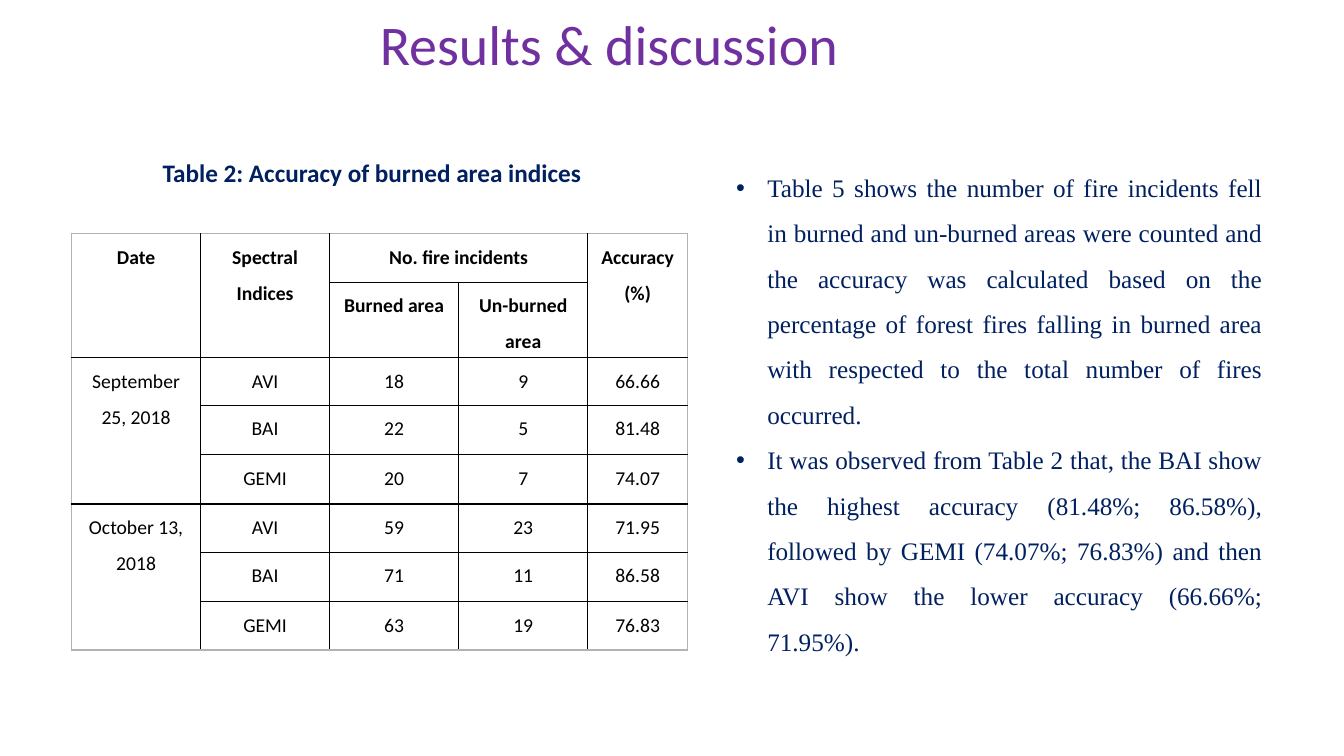
from lxml import etree
from pptx import Presentation, util as u
from pptx.dml.color import RGBColor
from pptx.enum import text as t
from pptx.oxml import ns

PX = 9144  # EMU per px, 100 px to the inch
NAVY, PURPLE, BLACK, GREY = "002060", "7030A0", "000000", "B2B2B2"

COLUMN_WIDTHS = [128, 128, 128, 128, 99]
ROW_HEIGHTS = [48, 75, 47, 49, 49, 48, 49, 48]
ROWS = [
    ["Date", "Spectral Indices", "No. fire incidents", "", "Accuracy\n(%)"],
    ["", "", "Burned area", "Un-burned area", ""],
    ["September 25, 2018", "AVI", "18", "9", "66.66"],
    ["", "BAI", "22", "5", "81.48"],
    ["", "GEMI", "20", "7", "74.07"],
    ["October 13, 2018", "AVI", "59", "23", "71.95"],
    ["", "BAI", "71", "11", "86.58"],
    ["", "GEMI", "63", "19", "76.83"],
]
HEADER_ROWS = 2
# First and last cell of each merged block, as (row, column)
MERGES = [((0, 0), (1, 0)), ((0, 1), (1, 1)), ((0, 2), (0, 3)),
          ((0, 4), (1, 4)), ((2, 0), (4, 0)), ((5, 0), (7, 0))]
FINDINGS = [
    "Table 5 shows the number of fire incidents fell in burned and un-burned areas "
    "were counted and the accuracy was calculated based on the percentage of forest "
    "fires falling in burned area with respected to the total number of fires occurred.",
    "It was observed from Table 2 that, the BAI show the highest accuracy "
    "(81.48%; 86.58%), followed by GEMI (74.07%; 76.83%) and then AVI show the "
    "lower accuracy (66.66%; 71.95%).",
]


def px(length):
    return u.Emu(length * PX)


def color(hex_string):
    return RGBColor.from_string(hex_string)


def write(frame, content, size=18, font="Calibri", fill=NAVY, bold=False,
          align=t.PP_ALIGN.CENTER, spacing=1.0):
    """Write each line of content as one paragraph and return the paragraphs."""
    frame.word_wrap = True
    for index, line in enumerate(content.split("\n")):
        paragraph = frame.add_paragraph() if index else frame.paragraphs[0]
        paragraph.alignment = align
        paragraph.line_spacing = spacing
        paragraph.space_before = paragraph.space_after = u.Pt(0)
        run = paragraph.add_run()
        run.text = line
        run.font.size, run.font.name, run.font.bold = u.Pt(size), font, bold
        run.font.color.rgb = color(fill)
    return frame.paragraphs


def place(shape, box):
    shape.left, shape.top, shape.width, shape.height = map(px, box)
    shape.text_frame.auto_size = t.MSO_AUTO_SIZE.NONE
    shape.text_frame.vertical_anchor = t.MSO_ANCHOR.TOP


def add_bullet(paragraph, indent):
    properties = paragraph._p.get_or_add_pPr()
    properties.set("marL", str(px(indent)))
    properties.set("indent", str(px(-indent)))
    font = etree.SubElement(properties, ns.qn("a:buFont"))
    font.set("typeface", "Arial")
    etree.SubElement(properties, ns.qn("a:buChar")).set("char", "•")


def add_borders(cell, outer_sides):
    """Draw the four borders, grey on the outside of the table."""
    properties = cell._tc.get_or_add_tcPr()
    for side in "LRTB":
        line = etree.SubElement(properties, ns.qn("a:ln" + side))
        line.set("w", str(u.Pt(1)))
        solid = etree.SubElement(line, ns.qn("a:solidFill"))
        tint = etree.SubElement(solid, ns.qn("a:srgbClr"))
        tint.set("val", GREY if side in outer_sides else BLACK)


def add_title(slide, box):
    title = slide.shapes.title
    place(title, box)
    write(title.text_frame, "Results & discussion", size=40, fill=PURPLE)


def add_accuracy_table(slide, box):
    left, top, width, height = box

    # Caption
    caption = slide.shapes.add_textbox(0, 0, 0, 0)
    place(caption, (left + 35, top, 526, 40))
    write(caption.text_frame, "Table 2: Accuracy of burned area indices", bold=True)

    # Grid
    table = slide.shapes.add_table(
        len(ROWS), len(COLUMN_WIDTHS), px(left), px(top + 81), px(width), px(height - 81)).table
    table.first_row = table.horz_banding = False
    for column, column_width in zip(table.columns, COLUMN_WIDTHS):
        column.width = px(column_width)
    for row, row_height in zip(table.rows, ROW_HEIGHTS):
        row.height = px(row_height)
    for first, last in MERGES:
        table.cell(*first).merge(table.cell(*last))

    # Cells
    for i, row in enumerate(ROWS):
        for j, value in enumerate(row):
            cell = table.cell(i, j)
            cell.margin_left = cell.margin_right = px(7)
            cell.margin_top = cell.margin_bottom = 0
            edges = {"L": j == 0, "R": j + cell.span_width == len(row),
                     "T": i == 0, "B": i + cell.span_height == len(ROWS)}
            add_borders(cell, [side for side, outer in edges.items() if outer])
            cell.fill.background()
            if value:
                write(cell.text_frame, value, size=14, fill=BLACK,
                      bold=i < HEADER_ROWS, spacing=1.5)


def add_findings(slide, box):
    body = slide.placeholders[1]
    place(body, box)
    for paragraph in write(body.text_frame, "\n".join(FINDINGS), font="Times New Roman",
                           align=t.PP_ALIGN.JUSTIFY, spacing=1.5):
        add_bullet(paragraph, 31)


def main():
    presentation = Presentation()
    presentation.slide_width, presentation.slide_height = px(1333), px(750)
    slide = presentation.slides.add_slide(presentation.slide_layouts[1])
    add_title(slide, (301, 4, 606, 108))
    add_accuracy_table(slide, (71, 151, 611, 494))
    add_findings(slide, (720, 151, 542, 505))
    presentation.save("out.pptx")


if __name__ == "__main__":
    main()
